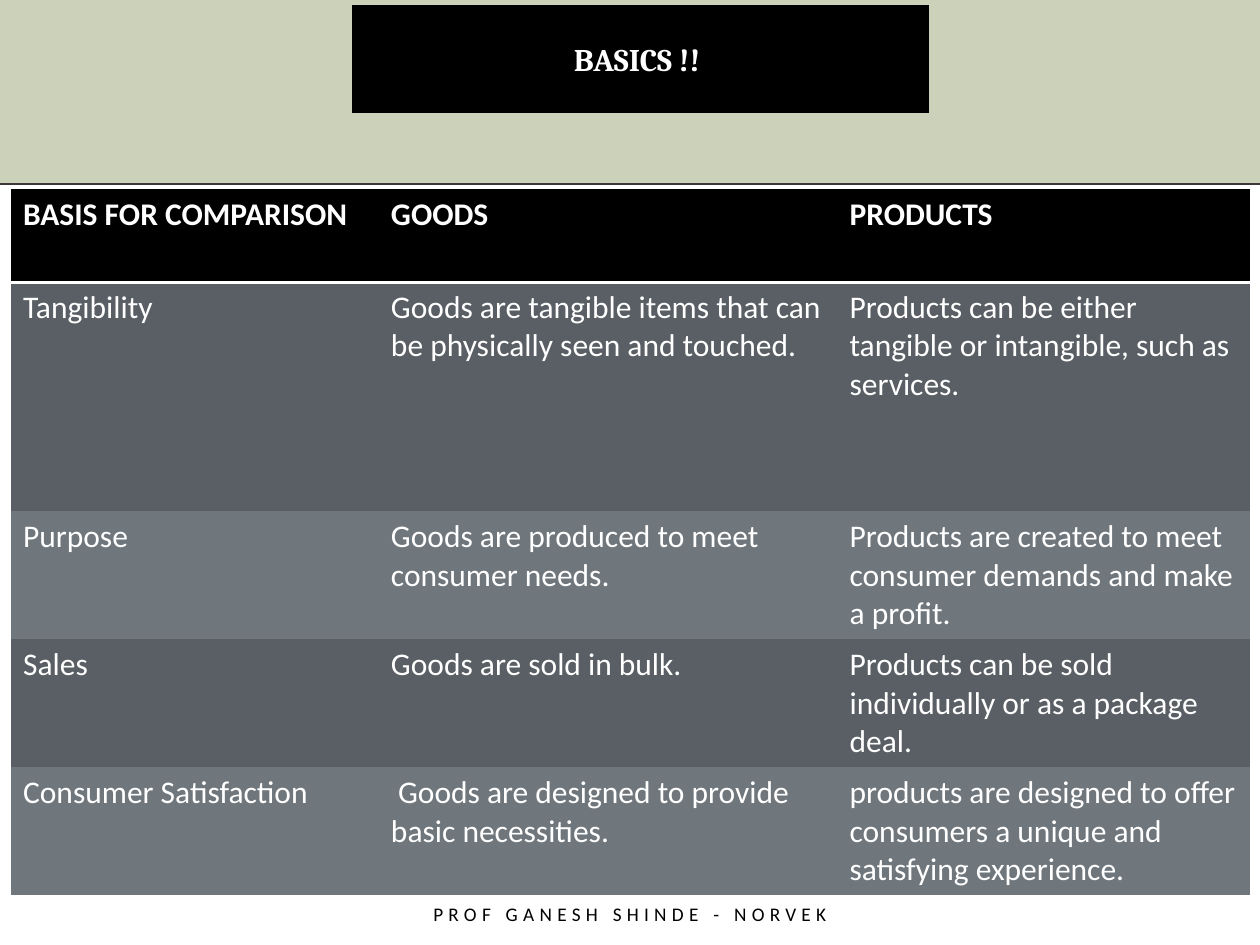
"""Build the slide that compares goods with products in a table."""
from dataclasses import dataclass

from pptx import Presentation
from pptx.dml.color import RGBColor
from pptx.enum import shapes, text
from pptx.oxml import parse_xml
from pptx.oxml.ns import nsdecls, qn
from pptx.util import Pt

SAGE = RGBColor(0xCC, 0xD1, 0xB9)
WHITE = RGBColor(0xFF, 0xFF, 0xFF)
BLACK = RGBColor(0x00, 0x00, 0x00)
RULE = RGBColor(0x3E, 0x37, 0x37)
DARK = RGBColor(0x59, 0x5F, 0x64)
LIGHT = RGBColor(0x6F, 0x77, 0x7D)
NO_STYLE = "{2D5ABB26-0587-4C30-8999-92F81FD0307C}"
WIDTH, HEIGHT, PANEL_TOP = 720, 540, 105.12


@dataclass(frozen=True)
class Box:
    left: float
    top: float
    width: float
    height: float

    def lengths(self) -> list:
        return [Pt(v) for v in (self.left, self.top, self.width, self.height)]


@dataclass(frozen=True)
class Row:
    height: float
    fill: RGBColor
    cells: tuple
    header: bool = False


ROWS = (
    Row(53.28, BLACK, ("BASIS FOR COMPARISON", "GOODS", "PRODUCTS"), header=True),
    Row(131.04, DARK, (
        "Tangibility",
        "Goods are tangible items that can be physically seen and touched.",
        "Products can be either tangible or intangible, such as services.")),
    Row(53.28, LIGHT, (
        "Purpose",
        "Goods are produced to meet consumer needs.",
        "Products are created to meet consumer demands and make a profit.")),
    Row(53.28, DARK, (
        "Sales",
        "Goods are sold in bulk.",
        "Products can be sold individually or as a package deal.")),
    Row(53.28, LIGHT, (
        "Consumer Satisfaction",
        " Goods are designed to provide basic necessities.",
        "products are designed to offer consumers a unique and satisfying experience.")),
)
COLUMNS = (210.24, 262.08, 236.16)


def write(tf, words: str, *, size=18, font="Calibri", color=WHITE, bold=False,
          align=text.PP_ALIGN.LEFT, before=0, spacing=0) -> None:
    tf.word_wrap = True
    p = tf.paragraphs[0]
    p.alignment, p.space_before = align, Pt(before)
    r = p.add_run()
    r.text = words
    r.font.size, r.font.name, r.font.bold = Pt(size), font, bold
    r.font.color.rgb = color
    if spacing:
        r._r.get_or_add_rPr().set("spc", str(spacing * 100))


def add_rect(s, box: Box, fill: RGBColor, line_width: float = 0):
    sp = s.shapes.add_shape(shapes.MSO_SHAPE.RECTANGLE, *box.lengths())
    sp.shadow.inherit = False
    sp.fill.solid()
    sp.fill.fore_color.rgb = fill
    if line_width:
        sp.line.color.rgb, sp.line.width = fill, Pt(line_width)
        sp._element.spPr.find(qn("a:ln")).append(
            parse_xml(f'<a:miter {nsdecls("a")} lim="800000"/>'))
    else:
        sp.line.fill.background()
    return sp


def add_rule(s, top: float) -> None:
    line = s.shapes.add_connector(
        shapes.MSO_CONNECTOR.STRAIGHT, Pt(0), Pt(top), Pt(WIDTH), Pt(top))
    line.line.color.rgb, line.line.width = RULE, Pt(1)
    line._element.spPr.append(parse_xml(f"<a:effectLst {nsdecls('a')}/>"))


def underline_cell(cell, color: RGBColor, width: float) -> None:
    cell._tc.get_or_add_tcPr().insert(0, parse_xml(
        f'<a:lnB {nsdecls("a")} w="{Pt(width)}"><a:solidFill>'
        f'<a:srgbClr val="{color}"/></a:solidFill></a:lnB>'))


def add_comparison(s, left: float, top: float) -> None:
    box = Box(left, top, sum(COLUMNS), sum(row.height for row in ROWS))
    table = s.shapes.add_table(len(ROWS), len(COLUMNS), *box.lengths()).table
    table._tbl.tblPr.find(qn("a:tableStyleId")).text = NO_STYLE
    for column, width in zip(table.columns, COLUMNS):
        column.width = Pt(width)
    for line, row in zip(table.rows, ROWS):
        line.height = Pt(row.height)
        for cell, words in zip(line.cells, row.cells):
            cell.fill.solid()
            cell.fill.fore_color.rgb = row.fill
            write(cell.text_frame, words, bold=row.header)
            if row.header:
                underline_cell(cell, WHITE, 2)


def main() -> None:
    prs = Presentation()
    prs.slide_width, prs.slide_height = Pt(WIDTH), Pt(HEIGHT)
    s = prs.slides.add_slide(prs.slide_layouts[6])
    s.background.fill.solid()
    s.background.fill.fore_color.rgb = SAGE

    add_rect(s, Box(0, PANEL_TOP, WIDTH, HEIGHT - PANEL_TOP), WHITE)
    add_rule(s, PANEL_TOP)
    add_comparison(s, 6, 108)

    footer = s.shapes.add_textbox(*Box(114, 510.48, 492, 23.04).lengths())
    footer.text_frame.vertical_anchor = text.MSO_ANCHOR.MIDDLE
    write(footer.text_frame, "PROF GANESH SHINDE - NORVEK", size=11, color=BLACK,
          align=text.PP_ALIGN.CENTER, spacing=3)

    title = add_rect(s, Box(204, 6, 324, 55.44), BLACK, line_width=6)
    title.text_frame.vertical_anchor = text.MSO_ANCHOR.MIDDLE
    write(title.text_frame, "BASICS !! ", font="Cambria", bold=True,
          align=text.PP_ALIGN.CENTER, before=4)
    prs.save("out.pptx")


if __name__ == "__main__":
    main()
